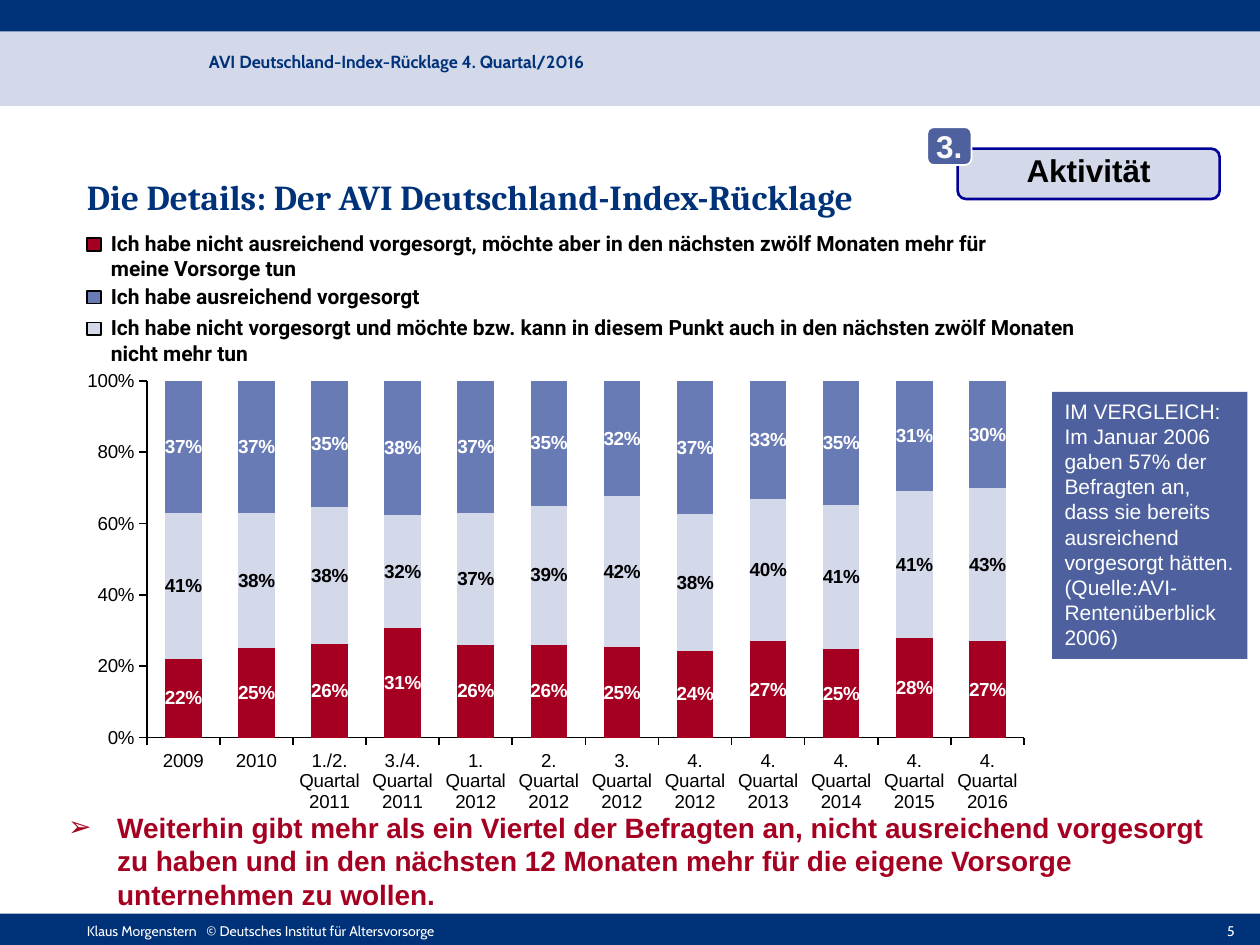
from dataclasses import dataclass

from lxml import etree
from pptx import Presentation
from pptx.chart.chart import Chart
from pptx.chart.data import CategoryChartData
from pptx.dml.color import RGBColor
from pptx.enum.chart import XL_CHART_TYPE, XL_LABEL_POSITION, XL_TICK_MARK
from pptx.enum.shapes import MSO_SHAPE
from pptx.enum.text import MSO_ANCHOR, MSO_AUTO_SIZE, PP_ALIGN
from pptx.oxml import parse_xml
from pptx.oxml.ns import nsdecls, qn
from pptx.shapes.autoshape import Shape
from pptx.slide import Slide
from pptx.text.text import Font, TextFrame
from pptx.util import Inches, Pt

RECTANGLE = MSO_SHAPE.RECTANGLE
ROUNDED = MSO_SHAPE.ROUNDED_RECTANGLE
LEFT, CENTER, RIGHT = PP_ALIGN.LEFT, PP_ALIGN.CENTER, PP_ALIGN.RIGHT
TOP, MIDDLE = MSO_ANCHOR.TOP, MSO_ANCHOR.MIDDLE
OUTSIDE = XL_TICK_MARK.OUTSIDE

Box = tuple[float, float, float, float]
Insets = tuple[float, float, float, float]
NO_INSETS: Insets = (0, 0, 0, 0)
DEFAULT_INSETS: Insets = (0.1, 0.05, 0.1, 0.05)
BULLET_INDENT = Inches(0.39)
SURVEY = "AVI Deutschland-Index-Rücklage"


@dataclass(frozen=True)
class TextStyle:
    name: str
    size: float
    color: str
    bold: bool = False


@dataclass(frozen=True)
class Theme:
    navy: str = "003279"
    pale: str = "D4D9EA"
    blue: str = "697BB5"
    slate: str = "4E619E"
    red: str = "A50021"
    outline: str = "000099"
    black: str = "000000"
    white: str = "FFFFFF"
    footer: TextStyle = TextStyle("Cabin", 8, "FFFFFF")
    header: TextStyle = TextStyle("Cabin", 10, "003279", True)
    title: TextStyle = TextStyle("Cambria", 20, "003279", True)
    legend: TextStyle = TextStyle("Roboto", 12, "000000", True)
    callout: TextStyle = TextStyle("Arial", 12, "FFFFFF")
    tag: TextStyle = TextStyle("Arial", 18, "000000", True)
    badge: TextStyle = TextStyle("Arial", 18, "F8F8F8", True)
    conclusion: TextStyle = TextStyle("Arial", 16, "A50021", True)
    axis: TextStyle = TextStyle("Arial", 10.7, "000000")


THEME = Theme()


@dataclass(frozen=True)
class Answer:
    """One stacked series with the colours of its bars and labels."""
    name: str
    values: tuple[int, ...]
    color: str
    label_color: str


@dataclass(frozen=True)
class LegendEntry:
    text: str
    color: str
    top: float


PERIODS = ["2009", "2010", "1./2. Quartal 2011", "3./4. Quartal 2011"]
PERIODS += [f"{quarter}. Quartal 2012" for quarter in range(1, 5)]
PERIODS += [f"4. Quartal {year}" for year in range(2013, 2017)]

ANSWERS = (
    Answer("Series 1", (22, 25, 26, 31, 26, 26, 25, 24, 27, 25, 28, 27), THEME.red, THEME.white),
    Answer("Series 2", (41, 38, 38, 32, 37, 39, 42, 38, 40, 41, 41, 43), THEME.pale, THEME.black),
    Answer("Series 3", (37, 37, 35, 38, 37, 35, 32, 37, 33, 35, 31, 30), THEME.blue, THEME.white),
)
LEGEND = (
    LegendEntry("Ich habe nicht ausreichend vorgesorgt, möchte aber in den nächsten zwölf Monaten "
                "mehr für \vmeine Vorsorge tun", THEME.red, 1.83),
    LegendEntry("Ich habe ausreichend vorgesorgt", THEME.blue, 2.25),
    LegendEntry("Ich habe nicht vorgesorgt und möchte bzw. kann in diesem Punkt auch in den "
                "nächsten zwölf Monaten \vnicht mehr tun", THEME.pale, 2.5),
)


def rgb(color: str) -> RGBColor:
    return RGBColor.from_string(color)


def set_font(font: Font, style: TextStyle) -> None:
    font.name, font.size, font.bold = style.name, Pt(style.size), style.bold
    font.color.rgb = rgb(style.color)


def write(frame: TextFrame, text: str, style: TextStyle, align: PP_ALIGN = LEFT,
          insets: Insets = DEFAULT_INSETS, anchor: MSO_ANCHOR = TOP,
          spacing: float = 1.0, wrap: bool = True, bullet: str | None = None) -> None:
    frame.text = text
    frame.word_wrap, frame.auto_size, frame.vertical_anchor = wrap, MSO_AUTO_SIZE.NONE, anchor
    (frame.margin_left, frame.margin_top,
     frame.margin_right, frame.margin_bottom) = map(Inches, insets)
    paragraph = frame.paragraphs[0]
    paragraph.alignment, paragraph.line_spacing = align, spacing
    paragraph.space_before = Pt(0)
    if bullet:
        properties = paragraph._p.get_or_add_pPr()
        properties.set("marL", str(BULLET_INDENT))
        properties.set("indent", str(-BULLET_INDENT))
        etree.SubElement(properties, qn("a:buChar")).set("char", bullet)
    set_font(paragraph.font, style)


def add_box(slide: Slide, box: Box, fill: str, kind: MSO_SHAPE = RECTANGLE,
            line: str | None = None, line_width: float = 1) -> Shape:
    shape = slide.shapes.add_shape(kind, *map(Inches, box))
    shape.shadow.inherit = False
    shape.fill.solid()
    shape.fill.fore_color.rgb = rgb(fill)
    if line:
        shape.line.color.rgb = rgb(line)
        shape.line.width = Pt(line_width)
    else:
        shape.line.fill.background()
    return shape


def add_text(slide: Slide, box: Box, text: str, style: TextStyle, **options) -> None:
    write(slide.shapes.add_textbox(*map(Inches, box)).text_frame, text, style, **options)


def place(shape: Shape, box: Box) -> None:
    shape.left, shape.top, shape.width, shape.height = map(Inches, box)


def add_legend_entry(slide: Slide, entry: LegendEntry) -> None:
    add_box(slide, (0.69, entry.top + 0.06, 0.11, 0.1), entry.color, line=THEME.black)
    add_text(slide, (0.88, entry.top, 8.28, 0.4), entry.text, THEME.legend, insets=NO_INSETS)


def fix_plot_area(chart: Chart, x: float, y: float, width: float, height: float) -> None:
    """Pin the inner plot area and leave the chart background clear."""
    plot_area = chart.element.find(".//" + qn("c:plotArea"))
    for layout in plot_area.findall(qn("c:layout")):
        plot_area.remove(layout)
    layout = etree.Element(qn("c:layout"))
    manual = etree.SubElement(layout, qn("c:manualLayout"))
    settings = {"layoutTarget": "inner", "xMode": "edge", "yMode": "edge",
                "x": x, "y": y, "w": width, "h": height}
    for tag, value in settings.items():
        etree.SubElement(manual, qn(f"c:{tag}")).set("val", str(value))
    plot_area.insert(0, layout)
    clear = parse_xml(f"<c:spPr {nsdecls('c', 'a')}><a:noFill/><a:ln><a:noFill/></a:ln></c:spPr>")
    chart.element.find(qn("c:chart")).addnext(clear)


def add_answer_chart(slide: Slide) -> None:
    data = CategoryChartData()
    data.categories = PERIODS
    for answer in ANSWERS:
        data.add_series(answer.name, answer.values)
    box = map(Inches, (0.23, 2.83, 8.66, 3.81))
    chart = slide.shapes.add_chart(XL_CHART_TYPE.COLUMN_STACKED_100, *box, data).chart
    chart.has_legend = chart.has_title = False
    set_font(chart.font, THEME.axis)
    plot = chart.plots[0]
    plot.gap_width, plot.overlap, plot.vary_by_categories = 100, 100, False
    for series, answer in zip(plot.series, ANSWERS):
        series.format.fill.solid()
        series.format.fill.fore_color.rgb = rgb(answer.color)
        labels = series.data_labels
        labels.show_value, labels.position = True, XL_LABEL_POSITION.CENTER
        labels.number_format, labels.number_format_is_linked = '0"%"', False
        set_font(labels.font, TextStyle("Arial", 10.8, answer.label_color, True))
    for axis in (chart.category_axis, chart.value_axis):
        axis.has_major_gridlines = False
        axis.major_tick_mark = OUTSIDE
        axis.format.line.color.rgb = rgb(THEME.black)
        axis.format.line.width = Pt(0.9)
        set_font(axis.tick_labels.font, THEME.axis)
    value_axis = chart.value_axis
    value_axis.minimum_scale, value_axis.maximum_scale, value_axis.major_unit = 0, 1, 0.2
    value_axis.tick_labels.number_format = "0%"
    value_axis.tick_labels.number_format_is_linked = False
    fix_plot_area(chart, 0.108, 0.051, 0.804, 0.743)


def main() -> None:
    presentation = Presentation()
    presentation.slide_width, presentation.slide_height = Inches(10), Inches(7.5)
    slide = presentation.slides.add_slide(presentation.slide_layouts[1])
    title, body = slide.placeholders

    # Header and footer bands
    add_box(slide, (0, 0.22, 10, 0.62), THEME.pale)
    add_box(slide, (0, 0, 10, 0.25), THEME.navy)
    add_box(slide, (0, 7.25, 10, 0.25), THEME.navy)
    add_text(slide, (1.56, 0.33, 4.25, 0.3), f"{SURVEY} 4. Quartal/2016", THEME.header,
             spacing=1.15)
    add_text(slide, (0.69, 7.27, 7.1, 0.23),
             "Klaus Morgenstern   © Deutsches Institut für Altersvorsorge",
             THEME.footer, insets=(0, 0.05, 0.1, 0.05))
    add_text(slide, (6.55, 7.27, 3.25, 0.23), "5", THEME.footer, align=RIGHT,
             insets=(0.1, 0.05, 0, 0.05))

    # Title and section tag
    place(title, (0.69, 1.39, 9, 0.62))
    write(title.text_frame, f"Die Details: Der {SURVEY}", THEME.title, insets=NO_INSETS)
    tag = add_box(slide, (7.6, 1.18, 2.08, 0.4), THEME.pale, ROUNDED, THEME.outline, 1.5)
    write(tag.text_frame, "Aktivität", THEME.tag, align=CENTER, anchor=MIDDLE, spacing=0.8)
    badge = add_box(slide, (7.36, 1.01, 0.35, 0.3), THEME.slate, ROUNDED, THEME.white)
    write(badge.text_frame, "3.", THEME.badge, align=CENTER, anchor=MIDDLE, wrap=False)

    # Chart with its legend and the comparison beside it
    add_answer_chart(slide)
    for entry in LEGEND:
        add_legend_entry(slide, entry)
    callout = add_box(slide, (8.35, 3.11, 1.55, 2.12), THEME.slate)
    write(callout.text_frame, "IM VERGLEICH: \vIm Januar 2006 gaben 57% der Befragten an, dass sie "
          "bereits ausreichend vorgesorgt hätten. (Quelle:AVI-Rentenüberblick 2006)", THEME.callout)

    # Conclusion
    place(body, (0.54, 6.43, 9.1, 0.44))
    write(body.text_frame, "Weiterhin gibt mehr als ein Viertel der Befragten an, nicht ausreichend "
          "vorgesorgt zu haben und in den nächsten 12 Monaten mehr für die eigene Vorsorge "
          "unternehmen zu wollen.", THEME.conclusion, insets=NO_INSETS, bullet="➢")

    presentation.save("out.pptx")


if __name__ == "__main__":
    main()
